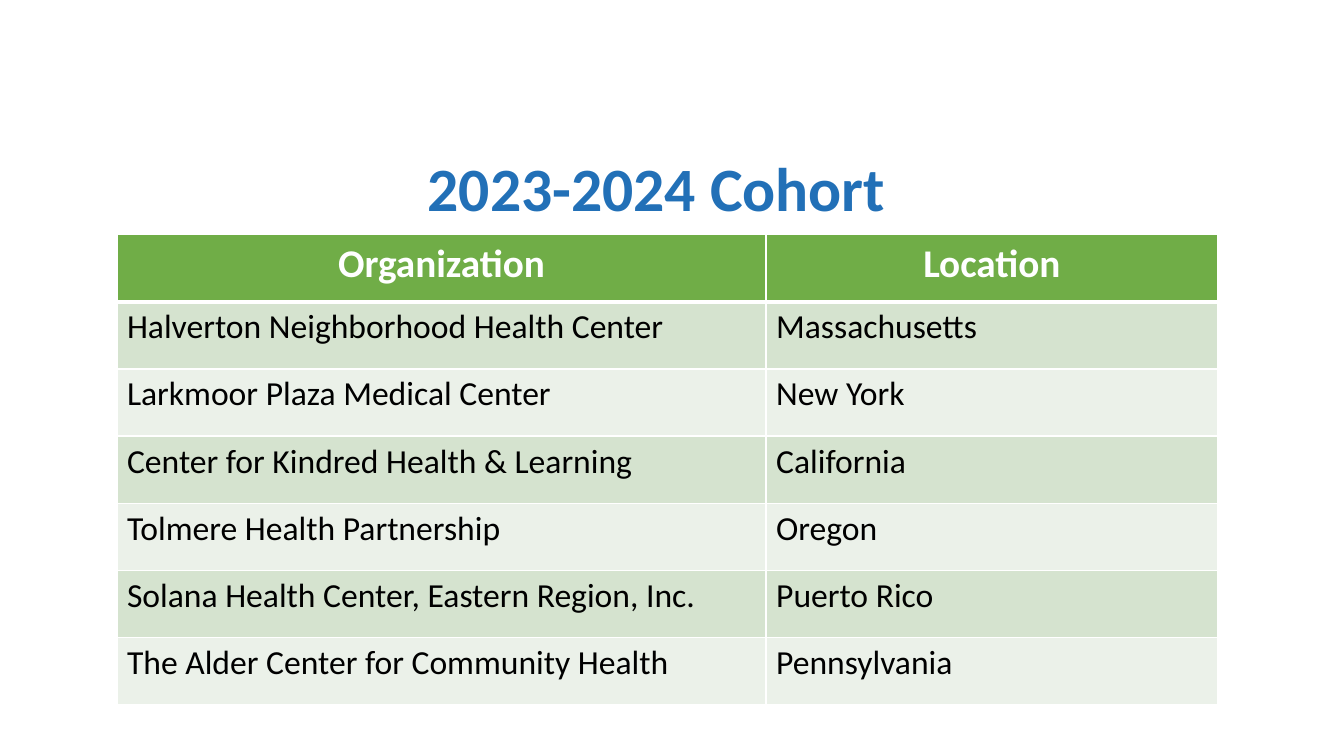
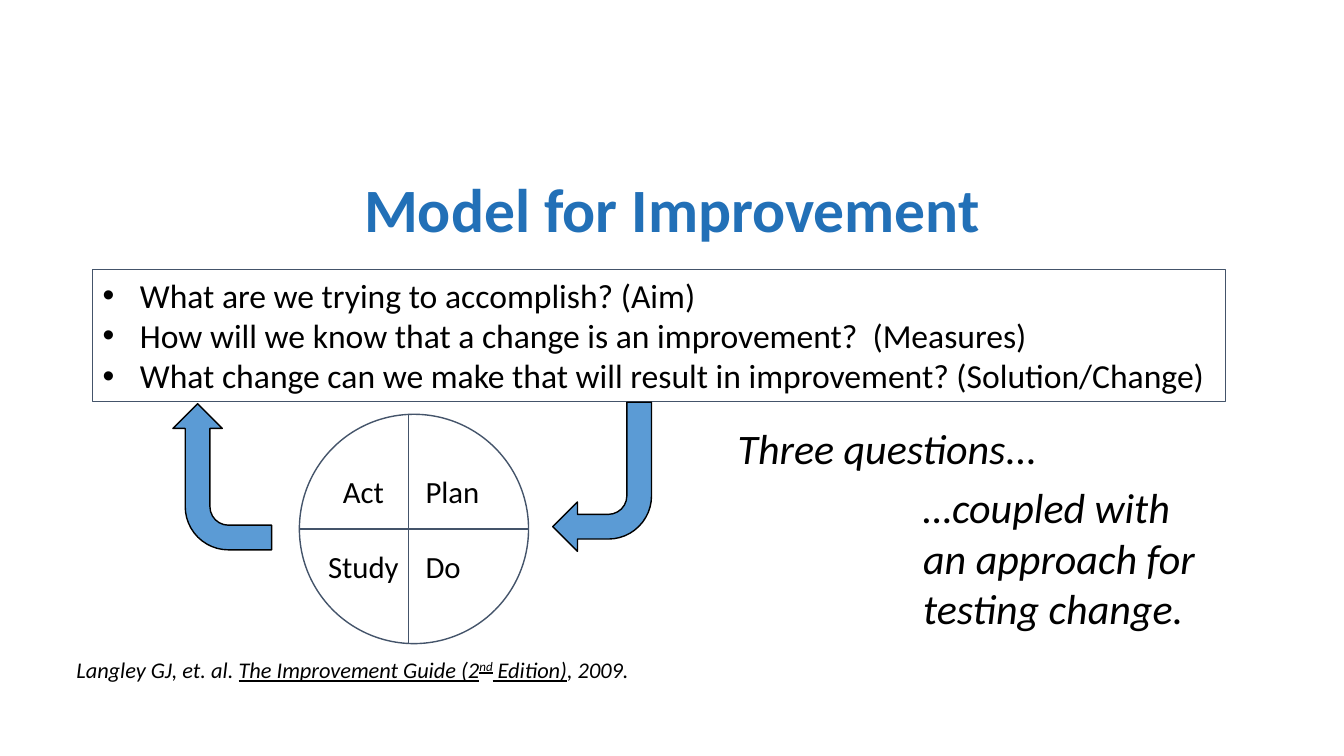
from dataclasses import dataclass

from lxml.etree import SubElement
from pptx import Presentation
from pptx.dml.color import RGBColor
from pptx.enum.shapes import MSO_CONNECTOR, MSO_SHAPE
from pptx.enum.text import MSO_ANCHOR, PP_ALIGN
from pptx.oxml.ns import qn
from pptx.util import Emu, Inches, Pt


@dataclass(frozen=True)
class Theme:
    font: str = "Calibri"
    title: str = "2270B7"
    ink: str = "000000"
    white: str = "FFFFFF"
    outline: str = "44546A"
    arrow: str = "5B9BD5"
    header: str = "70AD47"
    bands: tuple = ("D5E3CF", "EBF1E9")
    title_size: int = 44
    callout_size: int = 30
    header_size: int = 28
    body_size: int = 24
    label_size: int = 22
    source_size: int = 16
    thin: float = 0.75
    line: float = 1
    thick: float = 3


class Deck:
    columns = 40
    rows = 30

    def __init__(self, theme):
        self.theme = theme
        self.presentation = Presentation()
        self.presentation.slide_width = Inches(13.33)
        self.presentation.slide_height = Inches(7.5)
        self.slide = None

    def across(self, columns):
        return Emu(round(self.presentation.slide_width * columns / self.columns))

    def down(self, rows):
        return Emu(round(self.presentation.slide_height * rows / self.rows))

    def place(self, left, top, width, height):
        return self.across(left), self.down(top), self.across(width), self.down(height)

    def add_slide(self, title, left, top):
        self.slide = self.presentation.slides.add_slide(self.presentation.slide_layouts[6])
        text_frame = self.add_text(
            title, (left, top, 34.5, 3.32), self.theme.title_size,
            color=self.theme.title, bold=True, align=PP_ALIGN.CENTER)
        text_frame.vertical_anchor = MSO_ANCHOR.MIDDLE
        text_frame.paragraphs[0].line_spacing = 0.9

    def style_text(self, text_frame, size, color=None, bold=False, italic=False,
                   align=PP_ALIGN.LEFT):
        for paragraph in text_frame.paragraphs:
            paragraph.alignment = align
            for run in paragraph.runs:
                run.font.name = self.theme.font
                run.font.size = Pt(size)
                run.font.bold = bold
                run.font.italic = italic
                run.font.color.rgb = RGBColor.from_string(color or self.theme.ink)

    def add_text(self, text, box, size, **style):
        text_frame = self.slide.shapes.add_textbox(*self.place(*box)).text_frame
        text_frame.word_wrap = True
        text_frame.text = text
        self.style_text(text_frame, size, **style)
        return text_frame

    def add_source(self, parts, box):
        text_frame = self.add_text("", box, self.theme.source_size)
        for text, underline, baseline in parts:
            run = text_frame.paragraphs[0].add_run()
            run.text = text
            run.font.underline = underline
            if baseline:
                run.font._element.set("baseline", str(baseline))
        self.style_text(text_frame, self.theme.source_size, italic=True)

    def add_shape(self, kind, box, line, width, fill=None, rotation=0):
        shape = self.slide.shapes.add_shape(kind, *self.place(*box))
        shape.shadow.inherit = False
        shape.rotation = rotation
        shape.line.color.rgb = RGBColor.from_string(line)
        shape.line.width = Pt(width)
        if fill:
            shape.fill.solid()
            shape.fill.fore_color.rgb = RGBColor.from_string(fill)
        else:
            shape.fill.background()
        return shape

    def add_bullet_box(self, lines, box):
        shape = self.add_shape(MSO_SHAPE.RECTANGLE, box, self.theme.outline, self.theme.thin)
        text_frame = shape.text_frame
        text_frame.word_wrap = True
        text_frame.text = "\n".join(lines)
        self.style_text(text_frame, self.theme.body_size)
        indent = Inches(0.37)
        for paragraph in text_frame.paragraphs:
            properties = paragraph._p.get_or_add_pPr()
            properties.set("marL", str(indent))
            properties.set("indent", str(-indent))
            SubElement(properties, qn("a:buFont")).set("typeface", "Arial")
            SubElement(properties, qn("a:buChar")).set("char", "•")

    def add_line(self, start, end):
        connector = self.slide.shapes.add_connector(
            MSO_CONNECTOR.STRAIGHT, self.across(start[0]), self.down(start[1]),
            self.across(end[0]), self.down(end[1]))
        connector.line.color.rgb = RGBColor.from_string(self.theme.outline)
        connector.line.width = Pt(self.theme.line)
        SubElement(connector._element.spPr, qn("a:effectLst"))

    def add_borders(self, cell, top, bottom):
        properties = cell._tc.get_or_add_tcPr()
        widths = {"lnL": self.theme.line, "lnR": self.theme.line, "lnT": top, "lnB": bottom}
        for side, width in widths.items():
            border = SubElement(properties, qn(f"a:{side}"))
            border.set("w", str(Pt(width)))
            fill = SubElement(border, qn("a:solidFill"))
            SubElement(fill, qn("a:srgbClr")).set("val", self.theme.white)

    def add_table(self, records, box, widths):
        theme = self.theme
        table = self.slide.shapes.add_table(
            len(records), len(widths), *self.place(*box)).table
        for column, width in zip(table.columns, widths):
            column.width = self.across(width)
        for row_index, record in enumerate(records):
            header = row_index == 0
            fill = theme.header if header else theme.bands[(row_index - 1) % 2]
            for column_index, text in enumerate(record):
                cell = table.cell(row_index, column_index)
                self.add_borders(cell, theme.thick if row_index == 1 else theme.line,
                                 theme.thick if header else theme.line)
                cell.fill.solid()
                cell.fill.fore_color.rgb = RGBColor.from_string(fill)
                cell.text_frame.text = text
                self.style_text(
                    cell.text_frame, theme.header_size if header else theme.body_size,
                    color=theme.white if header else theme.ink, bold=header,
                    align=PP_ALIGN.CENTER if header else PP_ALIGN.LEFT)


def build_cohort(deck):
    deck.add_slide("2023-2024 Cohort", 2.3, 5.96)
    deck.add_table([
        ("Organization", "Location"),
        ("Halverton Neighborhood Health Center", "Massachusetts"),
        ("Larkmoor Plaza Medical Center", "New York"),
        ("Center for Kindred Health & Learning", "California"),
        ("Tolmere Health Partnership", "Oregon"),
        ("Solana Health Center, Eastern Region, Inc.", "Puerto Rico"),
        ("The Alder Center for Community Health", "Pennsylvania"),
    ], (3.48, 9.32, 32.76, 18.64), (19.32, 13.44))


def build_model(deck):
    theme = deck.theme
    deck.add_slide("Model for Improvement", 2.76, 6.76)
    deck.add_text("Three questions...", (21.66, 16.56, 17.1, 2.4),
                  theme.callout_size, italic=True)
    deck.add_text("…coupled with\nan approach for\ntesting change.",
                  (27.18, 18.92, 9.3, 6.44), theme.callout_size, italic=True)
    deck.add_bullet_box([
        "What are we trying to accomplish? (Aim)",
        "How will we know that a change is an improvement?  (Measures)",
        "What change can we make that will result in improvement? (Solution/Change)",
    ], (2.76, 10.68, 33.72, 5.24))

    left, top, width, height = wheel = (8.91, 16.44, 6.82, 9.1)
    middle, divider = top + height / 2, 12.15
    deck.add_shape(MSO_SHAPE.OVAL, wheel, theme.outline, theme.line)
    deck.add_line((left, middle), (left + width, middle))
    deck.add_line((divider, top), (divider, top + height))

    label_columns = ((9.21, PP_ALIGN.CENTER), (12.37, PP_ALIGN.LEFT))
    for label_top, labels in ((18.58, ("Act", "Plan")), (21.54, ("Study", "Do"))):
        for (label_left, align), label in zip(label_columns, labels):
            deck.add_text(label, (label_left, label_top, 3.21, 1.88),
                          theme.label_size, align=align)

    for box, rotation in (((4.44, 16.96, 4.35, 3.92), 270),
                          ((16.45, 15.96, 2.94, 5.92), 180)):
        deck.add_shape(MSO_SHAPE.BENT_ARROW, box, theme.ink, theme.line,
                       fill=theme.arrow, rotation=rotation)

    deck.add_source([
        ("Langley GJ, et. al. ", False, 0),
        ("The Improvement Guide (2", True, 0),
        ("nd", True, 30000),
        (" Edition)", True, 0),
        (", 2009.", False, 0),
    ], (1.98, 25.84, 18, 1.48))


def main():
    deck = Deck(Theme())
    build_cohort(deck)
    build_model(deck)
    deck.presentation.save("out.pptx")


if __name__ == "__main__":
    main()
